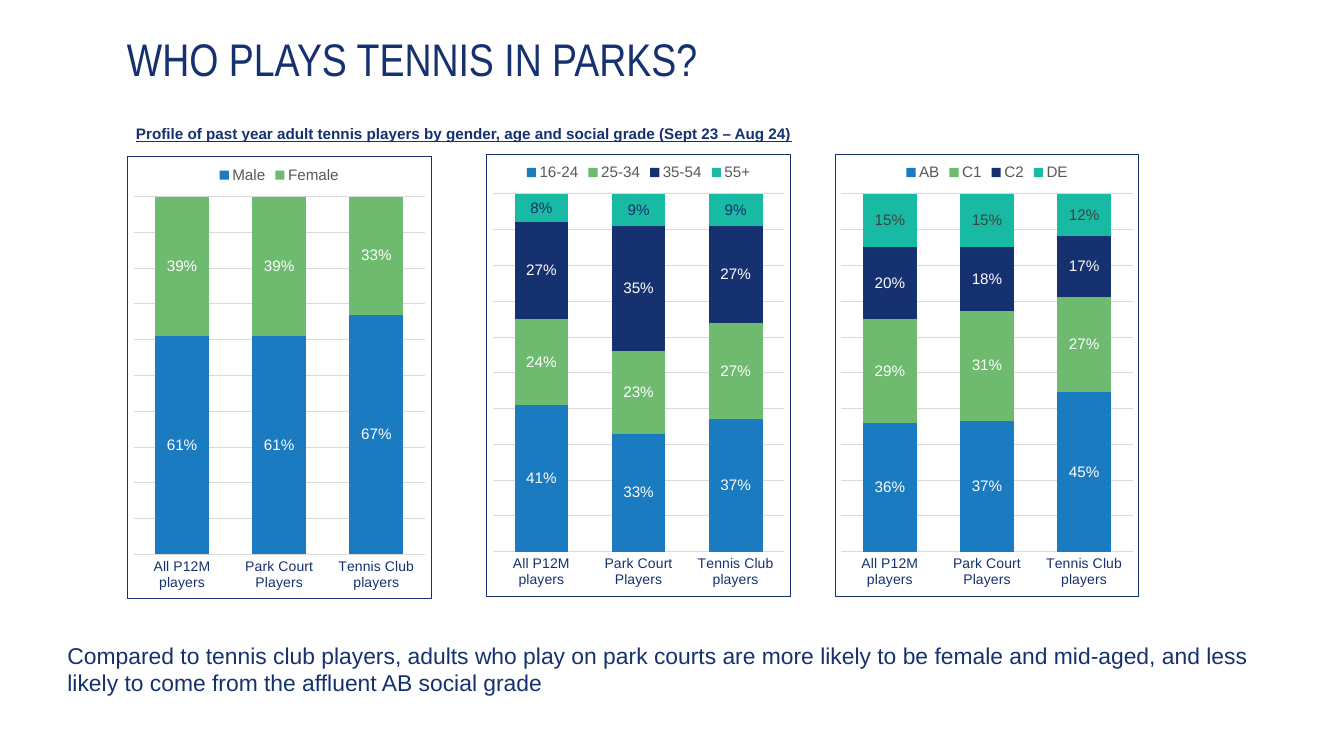
import pptx
import pptx.chart.data
import pptx.dml.color
import pptx.enum.chart
import pptx.enum.text
import pptx.oxml
import pptx.oxml.ns
import pptx.util

Pt = pptx.util.Pt
RGBColor = pptx.dml.color.RGBColor

NAVY = RGBColor(0x16, 0x31, 0x6F)
BLUE = RGBColor(0x1A, 0x7B, 0xC0)
GREEN = RGBColor(0x6E, 0xBA, 0x6F)
TEAL = RGBColor(0x18, 0xBA, 0xA4)
WHITE = RGBColor(0xFF, 0xFF, 0xFF)
DARK_GREY = RGBColor(0x40, 0x40, 0x40)
MID_GREY = RGBColor(0x59, 0x59, 0x59)
LIGHT_GREY = RGBColor(0xD9, 0xD9, 0xD9)

SERIES_COLORS = (BLUE, GREEN, NAVY, TEAL)
PLAYER_GROUPS = ("All P12M players", "Park Court Players", "Tennis Club players")
PANEL_TOP, PANEL_WIDTH, PANEL_HEIGHT = 121, 239.8, 348.8

# Left, top, label colour of the top band, shares by series
PROFILES = (
    (100, 123.1, WHITE, {"Male": (0.61, 0.61, 0.67),
                         "Female": (0.39, 0.39, 0.33)}),
    (383, PANEL_TOP, NAVY, {"16-24": (0.41, 0.33, 0.37),
                            "25-34": (0.24, 0.23, 0.27),
                            "35-54": (0.27, 0.35, 0.27),
                            "55+": (0.08, 0.09, 0.09)}),
    (657.4, PANEL_TOP, DARK_GREY, {"AB": (0.36, 0.37, 0.45),
                                   "C1": (0.29, 0.31, 0.27),
                                   "C2": (0.20, 0.18, 0.17),
                                   "DE": (0.15, 0.15, 0.12)}),
)


class ProfileSlide:
    """Holds the slide and its text style, and adds each kind of element."""

    def __init__(self, deck):
        self.slide = deck.slides.add_slide(deck.slide_layouts[5])
        self.base_format = {"name": "Arial", "bold": False}

    def style_font(self, font, size, color=NAVY, **changes):
        values = {**self.base_format, "size": Pt(size), **changes}
        for attribute, value in values.items():
            setattr(font, attribute, value)
        font.color.rgb = color

    def style_line(self, line, color):
        line.color.rgb = color
        line.width = Pt(0.75)

    def title(self, text, left, top, width, height):
        heading = self.slide.shapes.title
        place = {"left": left, "top": top, "width": width, "height": height}
        for attribute, value in place.items():
            setattr(heading, attribute, Pt(value))
        frame = heading.text_frame
        frame_format = {
            "margin_left": 0, "margin_top": 0, "margin_right": 0, "margin_bottom": 0,
            "word_wrap": True,
            "auto_size": pptx.enum.text.MSO_AUTO_SIZE.NONE,
            "vertical_anchor": pptx.enum.text.MSO_ANCHOR.MIDDLE,
        }
        for attribute, value in frame_format.items():
            setattr(frame, attribute, value)
        frame.text = text
        paragraph = frame.paragraphs[0]
        paragraph.alignment = pptx.enum.text.PP_ALIGN.LEFT
        paragraph.line_spacing = 0.85
        self.style_font(paragraph.runs[0].font, 36, name="Arial Narrow")

    def text(self, text, left, top, width, height, size, **changes):
        box = self.slide.shapes.add_textbox(Pt(left), Pt(top), Pt(width), Pt(height))
        box.text_frame.word_wrap = True
        box.text_frame.text = text
        self.style_font(box.text_frame.paragraphs[0].runs[0].font, size, **changes)

    def profile_chart(self, left, top, top_label_color, shares):
        data = pptx.chart.data.CategoryChartData(number_format="0%")
        data.categories = PLAYER_GROUPS
        for band, values in shares.items():
            data.add_series(band, values)
        chart = self.slide.shapes.add_chart(
            pptx.enum.chart.XL_CHART_TYPE.COLUMN_STACKED_100,
            Pt(left), Pt(top), Pt(PANEL_WIDTH), Pt(PANEL_HEIGHT), data).chart
        chart.has_title = False
        self.style_font(chart.font, 10, RGBColor(0, 0, 0))

        # Legend
        chart.has_legend = True
        chart.legend.position = pptx.enum.chart.XL_LEGEND_POSITION.TOP
        chart.legend.include_in_layout = False
        self.style_font(chart.legend.font, 12, MID_GREY)

        # Axes
        groups, scale = chart.category_axis, chart.value_axis
        groups.major_tick_mark = pptx.enum.chart.XL_TICK_MARK.NONE
        self.style_font(groups.tick_labels.font, 11)
        self.style_line(groups.format.line, LIGHT_GREY)
        scale_format = {"minimum_scale": 0, "maximum_scale": 1, "major_unit": 0.1,
                        "has_major_gridlines": True, "visible": False}
        for attribute, value in scale_format.items():
            setattr(scale, attribute, value)
        self.style_line(scale.major_gridlines.format.line, LIGHT_GREY)

        # Bands and their labels
        plot = chart.plots[0]
        plot.gap_width, plot.overlap = 81, 100
        plot.vary_by_categories = False
        last = len(shares) - 1
        for index, (band, color) in enumerate(zip(plot.series, SERIES_COLORS)):
            band.format.fill.solid()
            band.format.fill.fore_color.rgb = color
            labels = band.data_labels
            label_format = {"show_value": True, "number_format": "0%",
                            "number_format_is_linked": False}
            for attribute, value in label_format.items():
                setattr(labels, attribute, value)
            self.style_font(labels.font, 12, top_label_color if index == last else WHITE)
        self.frame_chart(chart)

    def frame_chart(self, chart):
        """Set the inner plot area and the outline of the chart."""
        namespaces = pptx.oxml.ns.nsdecls("c", "a")
        plot_area = chart.element.chart.plotArea
        for old_layout in plot_area.findall(pptx.oxml.ns.qn("c:layout")):
            plot_area.remove(old_layout)
        modes = '<c:layoutTarget val="inner"/><c:xMode val="edge"/><c:yMode val="edge"/>'
        area = {"x": 0.02, "y": 0.09, "w": 0.96, "h": 0.81}
        sizes = "".join(f'<c:{key} val="{value}"/>' for key, value in area.items())
        plot_area.insert(0, pptx.oxml.parse_xml(
            f"<c:layout {namespaces}><c:manualLayout>{modes}{sizes}"
            "</c:manualLayout></c:layout>"))
        chart.element.chart.addnext(pptx.oxml.parse_xml(
            f'<c:spPr {namespaces}><a:noFill/><a:ln w="{Pt(0.75)}"><a:solidFill>'
            f'<a:srgbClr val="{NAVY}"/></a:solidFill></a:ln></c:spPr>'))


def main():
    deck = pptx.Presentation()
    deck.slide_width, deck.slide_height = Pt(1058.4), Pt(595.4)
    page = ProfileSlide(deck)

    # Heading
    page.title("WHO PLAYS TENNIS IN PARKS?", 100, 31, 894, 36.7)

    # Player profiles
    for profile in PROFILES:
        page.profile_chart(*profile)
    page.text("Profile of past year adult tennis players by gender, age and social grade "
              "(Sept 23 – Aug 24)", 100, 94.3, 697, 21.6, 12, bold=True, underline=True)

    # Conclusion
    page.text("Compared to tennis club players, adults who play on park courts are more "
              "likely to be female and mid-aged, and less likely to come from the affluent "
              "AB social grade", 46, 501.8, 960, 51, 18)

    deck.save("out.pptx")


if __name__ == "__main__":
    main()
